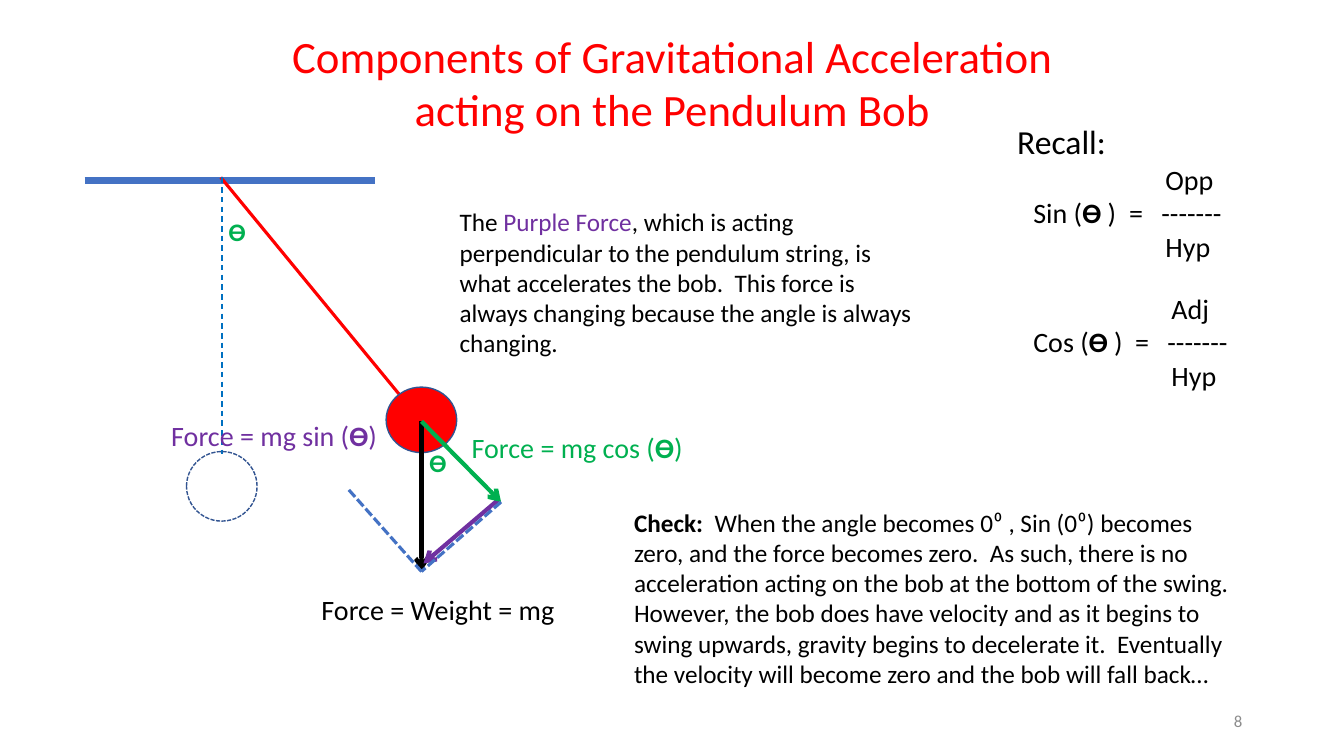
from dataclasses import dataclass

from lxml.etree import SubElement
from pptx import Presentation
from pptx.dml.color import RGBColor
from pptx.enum.dml import MSO_LINE
from pptx.enum.shapes import MSO_CONNECTOR, MSO_SHAPE
from pptx.enum.text import MSO_ANCHOR, PP_ALIGN
from pptx.oxml.ns import qn
from pptx.util import Inches, Pt


@dataclass(frozen=True)
class Theme:
    font: str = "Calibri"
    black: str = "000000"
    red: str = "FF0000"
    green: str = "00B050"
    purple: str = "7030A0"
    blue: str = "4472C4"
    outline: str = "325491"
    vertical: str = "0070C0"
    gray: str = "8C8C8C"
    title: int = 32
    heading: int = 24
    formula: int = 20
    body: int = 18
    number: int = 12


THEME = Theme()
THETA = "ϴ"


def style_font(font, size, color):
    font.name = THEME.font
    font.size = Pt(size)
    font.color.rgb = RGBColor.from_string(color)


def fill_paragraph(paragraph, parts, size, color):
    """Write parts, each a plain string or a (text, run color, bold) tuple."""
    style_font(paragraph.font, size, color)
    for part in parts:
        text, run_color, bold = part if isinstance(part, tuple) else (part, None, False)
        run = paragraph.add_run()
        run.text = text
        if bold:
            run.font.bold = True
        if run_color:
            run.font.color.rgb = RGBColor.from_string(run_color)


def add_text(slide, box, parts, size=THEME.body, color=THEME.black):
    shape = slide.shapes.add_textbox(*map(Inches, box))
    shape.text_frame.word_wrap = True
    fill_paragraph(shape.text_frame.paragraphs[0], parts, size, color)
    return shape


def add_line(slide, start, end, color, width, dash=None, arrow=False):
    line = slide.shapes.add_connector(
        MSO_CONNECTOR.STRAIGHT, *map(Inches, (*start, *end)))
    line.line.color.rgb = RGBColor.from_string(color)
    line.line.width = Pt(width)
    if dash:
        line.line.dash_style = dash
    properties = line._element.spPr
    if arrow:
        SubElement(properties.find(qn("a:ln")), qn("a:tailEnd"), type="arrow")
    SubElement(properties, qn("a:effectLst"))


def add_bob(slide, box, fill=None, dash=None):
    bob = slide.shapes.add_shape(MSO_SHAPE.OVAL, *map(Inches, box))
    bob.shadow.inherit = False
    if fill:
        bob.fill.solid()
        bob.fill.fore_color.rgb = RGBColor.from_string(fill)
    else:
        bob.fill.background()
    bob.line.color.rgb = RGBColor.from_string(THEME.outline)
    bob.line.width = Pt(1)
    if dash:
        bob.line.dash_style = dash


def add_title(slide, box, text):
    title = slide.shapes.title
    title.left, title.top, title.width, title.height = map(Inches, box)
    frame = title.text_frame
    frame.word_wrap = True
    frame.vertical_anchor = MSO_ANCHOR.TOP
    frame.paragraphs[0].alignment = PP_ALIGN.CENTER
    fill_paragraph(frame.paragraphs[0], [text], THEME.title, THEME.red)


def add_ratio(slide, box, name, numerator, equals_at):
    """Stack a fraction in three lines, with the equals sign and bar on tab stops."""
    bar_at = equals_at + 0.32
    term_indent = bar_at + 0.04
    equation = [f"{name} (", (THETA, None, True), " )\t=\t-------"]
    frame = add_text(slide, box, [numerator], THEME.formula).text_frame
    for parts in (equation, ["Hyp"]):
        fill_paragraph(frame.add_paragraph(), parts, THEME.formula, THEME.black)
    top, middle, bottom = frame.paragraphs
    for paragraph in (top, bottom):
        paragraph._p.get_or_add_pPr().set("marL", str(Inches(term_indent)))
    properties = middle._p.get_or_add_pPr()
    tabs = SubElement(properties, qn("a:tabLst"))
    properties.find(qn("a:defRPr")).addprevious(tabs)
    for position in (equals_at, bar_at):
        SubElement(tabs, qn("a:tab"), pos=str(Inches(position)), algn="l")


def add_recall(slide, box):
    left, top, width = box
    add_text(slide, (left, top, width, 0.5), ["Recall:"], THEME.heading)
    ratios = (("Sin", "Opp", 0.95), ("Cos", "Adj", 1.01))
    for index, (name, numerator, equals_at) in enumerate(ratios):
        ratio_box = (left + 0.16, top + 0.41 + 1.28 * index, width, 1.11)
        add_ratio(slide, ratio_box, name, numerator, equals_at)


def add_pendulum(slide, left, top):
    """Draw the support, string, bob, forces and labels from the support's left end."""
    def at(x, y, *size):
        return (left + x, top + y, *size)

    pivot, bob_center = at(1.35, 0), at(3.34, 2.42)
    weight_tip, string_tip = at(3.34, 3.91), at(4.13, 3.22)
    add_line(slide, at(0, 0.03), at(2.88, 0.03), THEME.blue, 4.5)
    add_line(slide, pivot, bob_center, THEME.red, 2.25)
    add_bob(slide, at(2.99, 2.08, 0.7, 0.65), fill=THEME.red)
    add_line(slide, at(1.36, 0), at(1.36, 2.74), THEME.vertical, 1, MSO_LINE.DASH)
    add_bob(slide, at(1.01, 2.72, 0.7, 0.69), dash=MSO_LINE.SQUARE_DOT)

    add_line(slide, bob_center, weight_tip, THEME.black, 3, arrow=True)
    add_line(slide, at(4.1, 3.2), at(3.36, 3.83), THEME.purple, 3, arrow=True)
    add_line(slide, bob_center, string_tip, THEME.green, 3, arrow=True)
    for corner in (at(2.62, 3.1), string_tip):
        add_line(slide, corner, weight_tip, THEME.blue, 2.25, MSO_LINE.SQUARE_DOT)

    theta = (THETA, None, True)
    for corner in (at(1.33, 0.34), at(3.32, 2.63)):
        add_text(slide, (*corner, 0.38, 0.4), [theta], color=THEME.green)
    forces = (
        (at(2.25, 4.07), ["Force = Weight = mg"], THEME.black),
        (at(0.76, 2.34), ["Force = mg sin (", theta, ")"], THEME.purple),
        (at(3.74, 2.46), ["Force = mg cos (", theta, ")"], THEME.green),
    )
    for corner, parts, color in forces:
        add_text(slide, (*corner, 2.75, 0.44), parts, THEME.formula, color)


def add_explanations(slide, purple_box, check_box):
    add_text(slide, purple_box, [
        "The ", ("Purple Force", THEME.purple, False),
        ", which is acting perpendicular to the pendulum string, is what "
        "accelerates the bob.  This force is always changing because the angle "
        "is always changing."])
    add_text(slide, check_box, [
        ("Check:  ", None, True),
        "When the angle becomes 0⁰ , Sin (0⁰) becomes zero, and the force becomes "
        "zero.  As such, there is no acceleration acting on the bob at the bottom "
        "of the swing.  However, the bob does have velocity and as it begins to "
        "swing upwards, gravity begins to decelerate it.  Eventually the velocity "
        "will become zero and the bob will fall back…"])


def add_slide_number(slide, box, number):
    frame = add_text(slide, box, [number], THEME.number, THEME.gray).text_frame
    frame.vertical_anchor = MSO_ANCHOR.MIDDLE
    frame.paragraphs[0].alignment = PP_ALIGN.RIGHT


def main():
    presentation = Presentation()
    presentation.slide_width = Inches(13.33)
    presentation.slide_height = Inches(7.5)
    title_only = presentation.slide_layouts[5]
    slide = presentation.slides.add_slide(title_only)
    add_title(slide, (2.43, 0.23, 8.48, 1.18),
              "Components of Gravitational Acceleration acting on the Pendulum Bob")
    add_recall(slide, (9.99, 1.15, 2.15))
    add_pendulum(slide, 0.84, 1.76)
    add_explanations(slide, (4.46, 2, 4.79, 1.62), (6.19, 4.98, 6.23, 1.92))
    add_slide_number(slide, (9.42, 6.95, 3, 0.4), "8")
    presentation.save("out.pptx")


if __name__ == "__main__":
    main()
